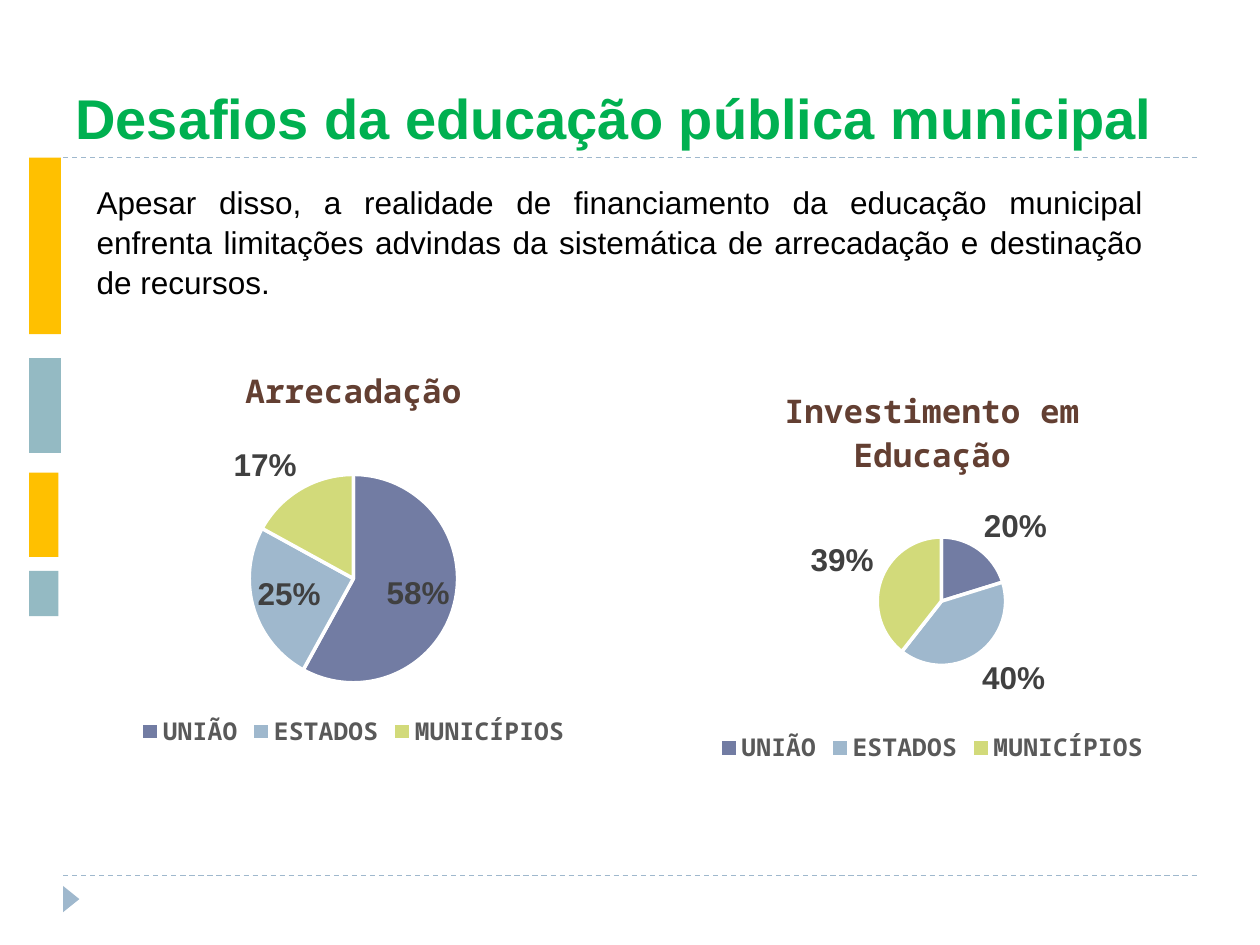
from pptx import Presentation
from pptx.chart.data import CategoryChartData
from pptx.dml.color import RGBColor
from pptx.enum.chart import XL_CHART_TYPE, XL_LABEL_POSITION, XL_LEGEND_POSITION
from pptx.enum.dml import MSO_LINE
from pptx.enum.shapes import MSO_CONNECTOR, MSO_SHAPE
from pptx.enum.text import MSO_ANCHOR, PP_ALIGN
from pptx.oxml.ns import qn
from pptx.util import Cm, Pt
from lxml.etree import SubElement

GREEN = RGBColor(0x00, 0xB0, 0x50)
BLACK = RGBColor(0x00, 0x00, 0x00)
WHITE = RGBColor(0xFF, 0xFF, 0xFF)
AMBER = RGBColor(0xFF, 0xC0, 0x00)
TEAL = RGBColor(0x94, 0xBA, 0xC3)
INDIGO = RGBColor(0x72, 0x7C, 0xA3)
SKY = RGBColor(0x9F, 0xB8, 0xCD)
LIME = RGBColor(0xD2, 0xDA, 0x7A)
BROWN = RGBColor(0x63, 0x3F, 0x32)
GRAY = RGBColor(0x59, 0x59, 0x59)
DARK = RGBColor(0x40, 0x40, 0x40)


def set_font(font, name, size, color, bold=False):
    font.name = name
    font.size = Pt(size)
    font.color.rgb = color
    font.bold = bold


def write(tf, text, font="Arial", size=18, color=BLACK, bold=False,
          align=PP_ALIGN.LEFT, anchor=MSO_ANCHOR.TOP, spacing=None):
    tf.word_wrap = True
    tf.vertical_anchor = anchor
    p = tf.paragraphs[0]
    p.alignment = align
    p.line_spacing = spacing
    r = p.add_run()
    r.text = text
    set_font(r.font, font, size, color, bold)


class Deck:
    body_font = "Arial"
    chart_font = "Noto Sans Mono"
    slice_colors = (INDIGO, SKY, LIME)

    def __init__(self, prs):
        self.s = prs.slides.add_slide(prs.slide_layouts[6])

    def text(self, x, y, w, h, text, **fmt):
        sp = self.s.shapes.add_textbox(Cm(x), Cm(y), Cm(w), Cm(h))
        write(sp.text_frame, text, font=self.body_font, **fmt)

    def rule(self, x1, x2, y):
        c = self.s.shapes.add_connector(
            MSO_CONNECTOR.STRAIGHT, Cm(x1), Cm(y), Cm(x2), Cm(y))
        c.line.color.rgb = SKY
        c.line.width = Pt(0.75)
        c.line.dash_style = MSO_LINE.DASH
        SubElement(c._element.spPr, qn("a:effectLst"))

    def shape(self, kind, x, y, w, h, color, rotation=0):
        sp = self.s.shapes.add_shape(kind, Cm(x), Cm(y), Cm(w), Cm(h))
        sp.shadow.inherit = False
        sp.fill.solid()
        sp.fill.fore_color.rgb = color
        sp.line.fill.background()
        sp.rotation = rotation

    def pie(self, x, y, w, h, title, values):
        data = CategoryChartData(number_format="0%")
        data.categories = ["UNIÃO", "ESTADOS", "MUNICÍPIOS"]
        data.add_series(title, values)
        chart = self.s.shapes.add_chart(
            XL_CHART_TYPE.PIE, Cm(x), Cm(y), Cm(w), Cm(h), data).chart
        set_font(chart.font, self.chart_font, 10, BLACK)

        chart.has_title = True
        r = chart.chart_title.text_frame.paragraphs[0].add_run()
        r.text = title
        set_font(r.font, self.chart_font, 18.6, BROWN, True)
        chart.chart_title.include_in_layout = False

        chart.has_legend = True
        chart.legend.position = XL_LEGEND_POSITION.BOTTOM
        chart.legend.include_in_layout = False
        set_font(chart.legend.font, self.chart_font, 14, GRAY, True)

        plot = chart.plots[0]
        plot.vary_by_categories = True
        series = plot.series[0]
        for i, color in enumerate(self.slice_colors):
            fmt = series.points[i].format
            fmt.fill.solid()
            fmt.fill.fore_color.rgb = color
            fmt.line.color.rgb = WHITE
            fmt.line.width = Pt(2)

        labels = series.data_labels
        labels.show_value = True
        labels.number_format = "0%"
        labels.number_format_is_linked = False
        labels.position = XL_LABEL_POSITION.BEST_FIT
        set_font(labels.font, self.body_font, 18, DARK, True)


def main():
    prs = Presentation()
    prs.slide_width = Cm(25.4)
    prs.slide_height = Cm(19.05)
    d = Deck(prs)

    for y in (17.65, 3.18):
        d.rule(1.27, 24.13, y)
    d.shape(MSO_SHAPE.ISOSCELES_TRIANGLE, 1.17, 17.96, 0.53, 0.33, SKY, 90)
    for y, w, h, color in ((3.18, 0.64, 3.56, AMBER), (7.22, 0.64, 1.91, TEAL),
                           (9.53, 0.59, 1.7, AMBER), (11.51, 0.59, 0.91, TEAL)):
        d.shape(MSO_SHAPE.RECTANGLE, 0.59, y, w, h, color)

    d.text(1.27, 0.43, 22.86, 2.74, "Desafios da educação pública municipal",
           size=32, color=GREEN, bold=True, anchor=MSO_ANCHOR.BOTTOM)
    d.text(1.7, 3.53, 21.59, 2.57,
           "Apesar disso, a realidade de financiamento da educação municipal "
           "enfrenta limitações advindas da sistemática de arrecadação e "
           "destinação de recursos.", align=PP_ALIGN.JUSTIFY, spacing=1.05)

    d.pie(1.3, 6.93, 11.66, 8.26, "Arrecadação", (0.58, 0.25, 0.17))
    d.pie(12.7, 7.32, 12.19, 8.2, "Investimento em Educação", (0.2, 0.4, 0.39))
    prs.save("out.pptx")


if __name__ == "__main__":
    main()
